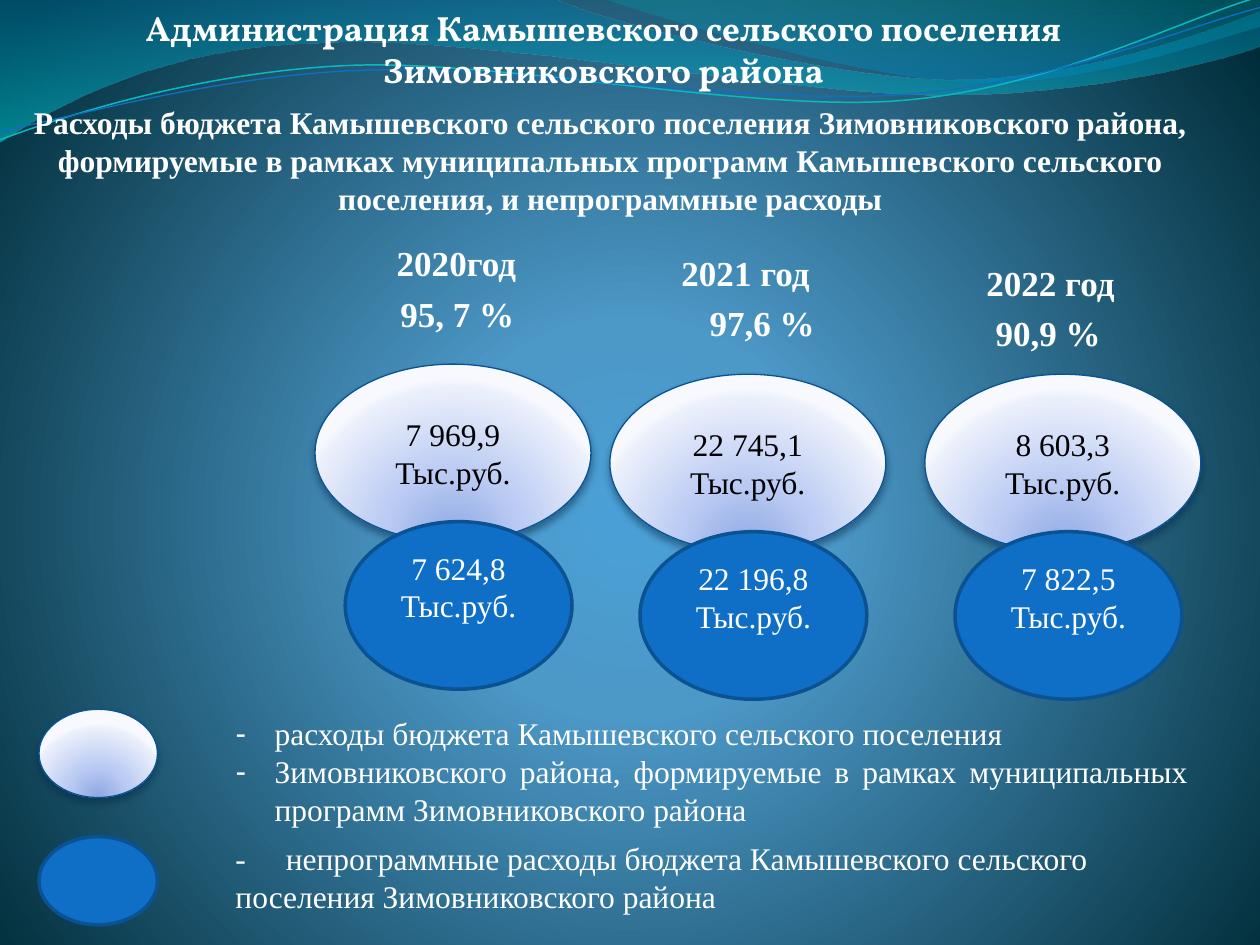
from dataclasses import dataclass

from lxml.etree import SubElement
from pptx import Presentation
from pptx.dml.color import RGBColor
from pptx.enum.shapes import MSO_SHAPE
from pptx.enum.text import MSO_ANCHOR, MSO_AUTO_SIZE, PP_ALIGN
from pptx.oxml import parse_xml
from pptx.oxml.ns import nsdecls, qn
from pptx.util import Inches, Pt

WHITE = RGBColor(0xFF, 0xFF, 0xFF)
BLACK = RGBColor(0x00, 0x00, 0x00)
BLUE = RGBColor(0x0F, 0x6F, 0xC6)
BLUE_EDGE = RGBColor(0x0B, 0x52, 0x92)
PALE_EDGE = RGBColor(0x09, 0x52, 0x95)
CYAN = RGBColor(0x0A, 0xB8, 0xBF)
SHADOW = RGBColor(0x04, 0x27, 0x47)

# Gradient stops: position in percent, colour, opacity in percent
BACKGROUND_STOPS = [(0, RGBColor(0x4A, 0xA0, 0xD6), 100), (25, RGBColor(0x4C, 0x98, 0xC7), 100),
                    (100, RGBColor(0x00, 0x2C, 0x38), 100)]
PALE_STOPS = [(0, RGBColor(0x8D, 0xA8, 0xE3), 100), (43, RGBColor(0xBB, 0xCB, 0xF3), 100),
              (93, RGBColor(0xEA, 0xEF, 0xFB), 100), (100, RGBColor(0xF7, 0xF9, 0xFF), 100)]
LEFT_WAVE_STOPS = [(0, RGBColor(0x00, 0x74, 0xA1), 45), (100, RGBColor(0x00, 0xC6, 0xCF), 55)]
RIGHT_WAVE_STOPS = [(0, RGBColor(0x00, 0xA1, 0xA9), 30), (80, RGBColor(0x00, 0x8B, 0xBF), 45)]

SERIF = "Times New Roman"
UNIT = "Тыс.руб."


@dataclass
class Year:
    label: str
    label_at: tuple
    percent: str
    percent_at: tuple
    programme: str
    other: str
    left: float
    top: float


@dataclass
class Wave:
    """Points are (x, y); segments of six numbers are Bézier curves."""
    start: tuple
    segments: list
    stops: list = None
    color: RGBColor = None
    width: float = 0


YEARS = [
    Year("2020год", (3.05, 1.87), "95, 7 %", (2.89, 2.27), "7 969,9", "7 624,8", 2.5, 2.89),
    Year("2021 год", (5.31, 1.95), "97,6 %", (5.31, 2.34), "22 745,1", "22 196,8", 4.84, 2.97),
    Year("2022 год", (7.73, 2.03), "90,9 %", (7.58, 2.42), "8 603,3", "7 822,5", 7.34, 2.97),
]

WAVES = [
    Wave((0, 0), [(4.4, -0.01), (4.76, 0.17, 6.64, 0.63, 7.58, 0.63),
                  (8.53, 0.63, 9.58, 0.26, 10, 0.09), (10.01, 0.36),
                  (9.83, 0.44, 8.7, 0.76, 7.46, 0.75), (6.22, 0.75, 3.82, 0.28, 2.57, 0.34),
                  (1.29, 0.36, 0.46, 0.83, -0.01, 1.13)], stops=LEFT_WAVE_STOPS),
    Wave((4.79, -0.01), [(5.09, 0.11, 6.82, 0.62, 7.69, 0.65),
                         (8.56, 0.69, 9.61, 0.32, 10, 0.21), (10, 0)], stops=RIGHT_WAVE_STOPS),
    Wave((0, 1.11), [(0.48, 0.93, 1.58, 0.57, 2.77, 0.52), (3.95, 0.47, 5.93, 0.89, 7.13, 0.8),
                     (8.33, 0.71, 9.38, 0.15, 9.98, -0.02)], color=CYAN, width=0.85),
    Wave((0, 1.04), [(0.47, 0.96, 1.64, 0.61, 2.83, 0.56), (4.03, 0.51, 5.97, 0.84, 7.17, 0.75),
                     (8.36, 0.67, 9.41, 0.21, 10, 0.06)], color=BLUE, width=0.75),
]


def set_gradient(fill, element, stops: list, focus: tuple = None) -> None:
    """Fill radially around focus (left, top, right, bottom percent), or downwards without it."""
    fill.gradient()
    old = next(element.iter(qn("a:gradFill")))
    gradient = parse_xml(f'<a:gradFill {nsdecls("a")} rotWithShape="1"><a:gsLst/></a:gradFill>')
    for position, color, opacity in stops:
        stop = SubElement(gradient[0], qn("a:gs"), pos=str(position * 1000))
        rgb = SubElement(stop, qn("a:srgbClr"), val=str(color))
        if opacity < 100:
            SubElement(rgb, qn("a:alpha"), val=str(opacity * 1000))
    if focus:
        circle = SubElement(gradient, qn("a:path"), {"path": "circle"})
        edges = {side: str(value * 1000) for side, value in zip("ltrb", focus)}
        SubElement(circle, qn("a:fillToRect"), edges)
    else:
        SubElement(gradient, qn("a:lin"), ang="5400000", scaled="1")
    old.getparent().replace(old, gradient)


def bend_segments(shape, segments: list) -> None:
    """Turn the three straight steps of each curved segment into one Bézier curve."""
    steps = iter(list(shape._element.iter(qn("a:lnTo"))))
    for segment in segments:
        first = next(steps)
        if len(segment) == 2:
            continue
        curve = parse_xml(f'<a:cubicBezTo {nsdecls("a")}/>')
        first.addprevious(curve)
        for step in (first, next(steps), next(steps)):
            curve.append(step[0])
            step.getparent().remove(step)


def add_wave(slide, wave: Wave) -> None:
    builder = slide.shapes.build_freeform(*(Inches(value) for value in wave.start))
    points = [(Inches(segment[i]), Inches(segment[i + 1]))
              for segment in wave.segments for i in range(0, len(segment), 2)]
    builder.add_line_segments(points, close=bool(wave.stops))
    shape = builder.convert_to_shape()
    bend_segments(shape, wave.segments)
    shape.shadow.inherit = False
    if wave.stops:
        set_gradient(shape.fill, shape._element, wave.stops)
        shape.line.fill.background()
    else:
        shape.fill.background()
        shape.line.color.rgb = wave.color
        shape.line.width = Pt(wave.width)


def write(frame, lines: list, size: int, color: RGBColor = WHITE, bold: bool = False,
          align=PP_ALIGN.LEFT, font: str = SERIF) -> None:
    frame.word_wrap = True
    frame.text = "\n".join(lines)
    for paragraph in frame.paragraphs:
        paragraph.alignment = align
        paragraph.space_before = Pt(0)
        paragraph.font.name = font
        paragraph.font.size = Pt(size)
        paragraph.font.bold = bold
        paragraph.font.color.rgb = color


def add_text(slide, box: tuple, text: str, size: int, **style):
    frame = slide.shapes.add_textbox(*map(Inches, box)).text_frame
    write(frame, [text], size, **style)
    frame.auto_size = MSO_AUTO_SIZE.SHAPE_TO_FIT_TEXT
    return frame


def place(shape, box: tuple) -> None:
    shape.left, shape.top, shape.width, shape.height = map(Inches, box)
    shape.text_frame.vertical_anchor = MSO_ANCHOR.TOP
    shape.text_frame.auto_size = MSO_AUTO_SIZE.NONE


def add_ellipse(slide, box: tuple, pale: bool, lines: list = ()) -> None:
    shape = slide.shapes.add_shape(MSO_SHAPE.OVAL, *map(Inches, box))
    shape.shadow.inherit = False
    shape.line.color.rgb = PALE_EDGE if pale else BLUE_EDGE
    shape.line.width = Pt(0.75 if pale else 2)
    if pale:
        set_gradient(shape.fill, shape._element, PALE_STOPS, (50, 130, 50, -30))
        effects = next(shape._element.iter(qn("a:effectLst")))
        shadow = SubElement(effects, qn("a:outerShdw"), blurRad=str(Pt(4.5)), dist=str(Pt(3)),
                            dir="5400000", rotWithShape="0")
        rgb = SubElement(shadow, qn("a:srgbClr"), val=str(SHADOW))
        SubElement(rgb, qn("a:alpha"), val="48000")
    else:
        shape.fill.solid()
        shape.fill.fore_color.rgb = BLUE
    if lines:
        frame = shape.text_frame
        write(frame, lines, 18, BLACK if pale else WHITE, align=PP_ALIGN.CENTER)
        frame.vertical_anchor = MSO_ANCHOR.MIDDLE
        if not pale:
            frame.margin_bottom = Inches(0.35)


def add_year(slide, year: Year) -> None:
    add_text(slide, (*year.label_at, 1.48, 0.44), year.label, 20, bold=True)
    add_text(slide, (*year.percent_at, 1.48, 0.44), year.percent, 20, bold=True,
             align=PP_ALIGN.CENTER)
    add_ellipse(slide, (year.left, year.top, 2.19, 1.41), True, [year.programme, UNIT])
    add_ellipse(slide, (year.left + 0.24, year.top + 1.25, 1.8, 1.33), False, [year.other, UNIT])


def add_legend(slide, body) -> None:
    add_ellipse(slide, (0.31, 5.63, 0.94, 0.7), True)
    add_ellipse(slide, (0.31, 6.64, 0.94, 0.7), False)
    place(body, (1.77, 5.62, 7.76, 1.01))
    write(body.text_frame, [
        "расходы бюджета Камышевского сельского поселения",
        "Зимовниковского района, формируемые в рамках муниципальных программ "
        "Зимовниковского района"], 18, align=PP_ALIGN.JUSTIFY)
    for paragraph in body.text_frame.paragraphs:
        properties = paragraph._p.get_or_add_pPr()
        properties.set("marL", str(Inches(0.31)))
        properties.set("indent", str(Inches(-0.31)))
        bullet = parse_xml(f'<a:buChar {nsdecls("a")} char="-"/>')
        properties.insert_element_before(bullet, "a:tabLst", "a:defRPr", "a:extLst")
    frame = add_text(slide, (1.77, 6.61, 7.78, 0.71), "-\tнепрограммные расходы бюджета "
                     "Камышевского сельского поселения Зимовниковского района", 18)
    tabs = parse_xml(f'<a:tabLst {nsdecls("a")}><a:tab pos="{Inches(0.4)}" algn="l"/></a:tabLst>')
    properties = frame.paragraphs[0]._p.get_or_add_pPr()
    properties.insert_element_before(tabs, "a:defRPr", "a:extLst")


def main() -> None:
    presentation = Presentation()
    presentation.slide_width, presentation.slide_height = Inches(10), Inches(7.5)
    slide = presentation.slides.add_slide(presentation.slide_layouts[1])
    title, body = slide.placeholders
    set_gradient(slide.background.fill, slide._element, BACKGROUND_STOPS, (10, 110, 10, 100))
    for wave in WAVES:
        add_wave(slide, wave)
    add_text(slide, (0.16, 0.77, 9.37, 1.01),
             "Расходы бюджета Камышевского сельского поселения Зимовниковского района, "
             "формируемые в рамках муниципальных программ Камышевского сельского поселения, "
             "и непрограммные расходы", 18, bold=True, align=PP_ALIGN.CENTER)
    for year in YEARS:
        add_year(slide, year)
    add_legend(slide, body)
    place(title, (0.67, 0, 8.24, 0.77))
    write(title.text_frame, ["Администрация Камышевского сельского поселения "
                             "Зимовниковского района"], 20, bold=True,
          align=PP_ALIGN.CENTER, font="Vollkorn")
    slide.shapes._spTree.append(title._element)  # bring the title in front of the waves
    presentation.save("out.pptx")


if __name__ == "__main__":
    main()
